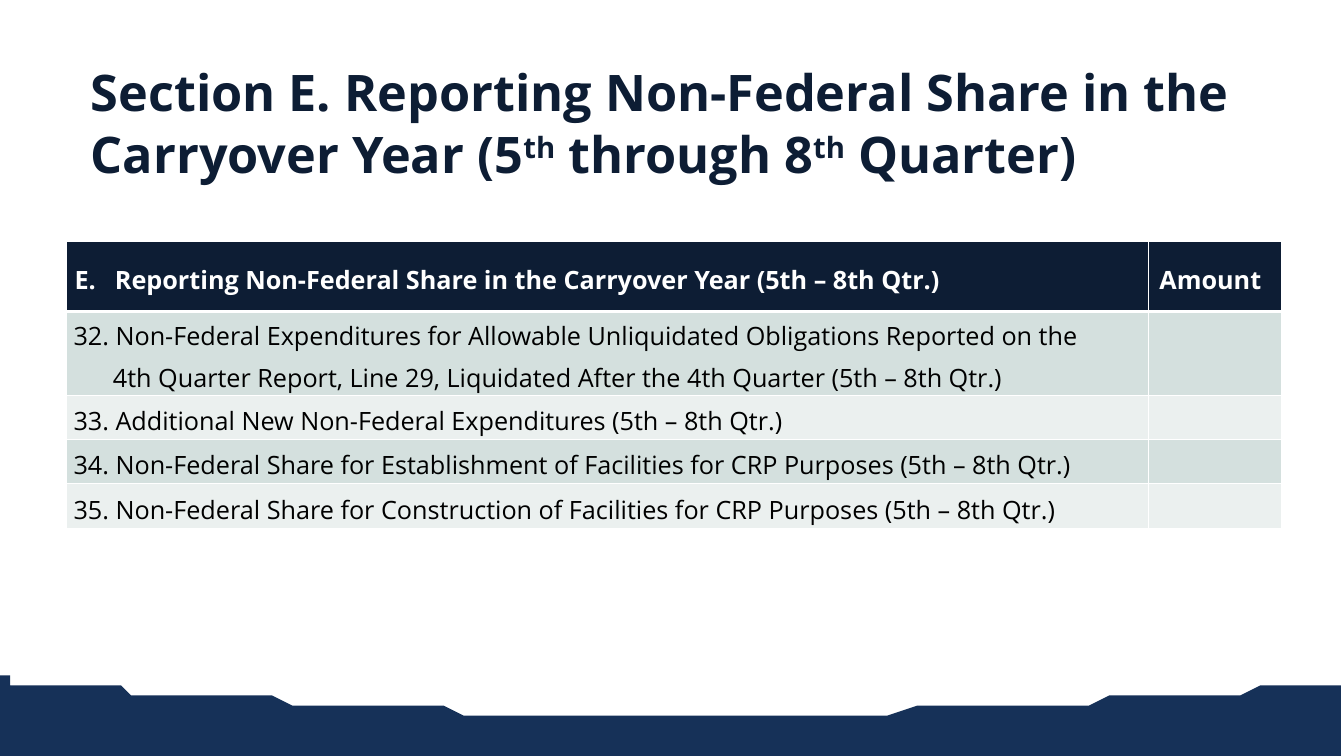
from lxml.etree import SubElement
from pptx import Presentation
from pptx.dml.color import RGBColor
from pptx.enum.dml import MSO_FILL
from pptx.enum.text import MSO_ANCHOR, MSO_AUTO_SIZE, PP_ALIGN
from pptx.oxml import parse_xml
from pptx.oxml.ns import nsdecls
from pptx.util import Inches, Pt

NAVY = RGBColor(0x0D, 0x1D, 0x34)
WAVE_BLUE = RGBColor(0x16, 0x31, 0x58)
SAGE = RGBColor(0xD4, 0xE0, 0xDE)
PALE_SAGE = RGBColor(0xEB, 0xF0, 0xEF)
WHITE = RGBColor(0xFF, 0xFF, 0xFF)
BLACK = RGBColor(0, 0, 0)

COLUMNS, ROWS = 133.33, 75
HEADER = [[("E.\tReporting Non-Federal Share in the Carryover Year (5th – 8th Qtr.)", 4, -4)],
          [("Amount", 0, 0)]]
LINES = [
    [("32. Non-Federal Expenditures for Allowable Unliquidated Obligations Reported on the", 0, 0),
     ("4th Quarter Report, Line 29, Liquidated After the 4th Quarter (5th – 8th Qtr.)", 3.9, 0)],
    [("33. Additional New Non-Federal Expenditures (5th – 8th Qtr.)", 0, 0)],
    [("34. Non-Federal Share for Establishment of Facilities for CRP Purposes (5th – 8th Qtr.)", 0, 0)],
    [("35. Non-Federal Share for Construction of Facilities for CRP Purposes (5th – 8th Qtr.)", 0, 0)],
]


def apply(target, values):
    for name, value in values.items():
        setattr(target, name, value)


def bezier(start, first, second, end, steps=40):
    for step in range(steps + 1):
        t = step / steps
        weights = ((1 - t) ** 3, 3 * t * (1 - t) ** 2, 3 * t ** 2 * (1 - t), t ** 3)
        yield tuple(sum(w * point[axis] for w, point in zip(weights, (start, first, second, end)))
                    for axis in (0, 1))


class SlideBuilder:
    font_name = "Open Sans"

    def __init__(self, deck):
        self.unit = deck.slide_height / ROWS
        self.page = deck.slides.add_slide(deck.slide_layouts[5])

    def grid(self, *cells):
        return [round(cell * self.unit) for cell in cells]

    def style(self, font, size, color, bold):
        apply(font, {"name": self.font_name, "size": Pt(size), "bold": bold})
        font.color.rgb = color

    def title(self, place, spans):
        box = self.page.shapes.title
        apply(box, dict(zip(("left", "top", "width", "height"), self.grid(*place))))
        apply(box.text_frame, {"vertical_anchor": MSO_ANCHOR.BOTTOM, "word_wrap": True,
                               "auto_size": MSO_AUTO_SIZE.NONE})
        para = box.text_frame.paragraphs[0]
        apply(para, {"alignment": PP_ALIGN.LEFT, "line_spacing": 1.02})
        for text, raised in spans:
            span = para.add_run()
            span.text = text
            self.style(span.font, 36, NAVY, True)
            if raised:
                span._r.get_or_add_rPr().set("baseline", "30000")

    def wave(self, curves, color):
        points = [point for curve in curves for point in bezier(*curve)]
        points += [(COLUMNS, ROWS), (0, ROWS)]
        builder = self.page.shapes.build_freeform(*points[0], scale=self.unit)
        builder.add_line_segments(points[1:], close=True)
        shape = builder.convert_to_shape()
        shape.shadow.inherit = False
        shape.fill.solid()
        shape.fill.fore_color.rgb = color
        shape.line.fill.background()

    def borders(self, cell, bottom):
        properties = cell._tc.get_or_add_tcPr()
        for index, (side, width) in enumerate((("L", 1), ("R", 1), ("T", 1), ("B", bottom))):
            line = parse_xml(f'<a:ln{side} {nsdecls("a")} w="{Pt(width)}"><a:solidFill>'
                             f'<a:srgbClr val="{WHITE}"/></a:solidFill></a:ln{side}>')
            properties.insert(index, line)

    def cell(self, cell, paragraphs, fill, color, bold, margin, bottom):
        side = self.grid(margin)[0]
        apply(cell, {"margin_left": side, "margin_right": side, "margin_top": 0,
                     "margin_bottom": 0, "vertical_anchor": MSO_ANCHOR.MIDDLE})
        cell.fill.solid()
        cell.fill.fore_color.rgb = fill
        self.borders(cell, bottom)
        frame = cell.text_frame
        for index, (text, left, first) in enumerate(paragraphs):
            para = frame.add_paragraph() if index else frame.paragraphs[0]
            para.line_spacing = 1.2
            left, first = self.grid(left, first)
            properties = para._p.get_or_add_pPr()
            properties.set("marL", str(left))
            properties.set("indent", str(first))
            span = para.add_run()
            span.text = text
            self.style(span.font, 18, color, bold)

    def table(self, place, widths, heights, header, lines):
        table = self.page.shapes.add_table(len(heights), len(widths), *self.grid(*place)).table
        for column, width in zip(table.columns, self.grid(*widths)):
            column.width = width
        for row, height in zip(table.rows, self.grid(*heights)):
            row.height = height
        for index, (paragraphs, margin) in enumerate(zip(header, (0.8, 1.1))):
            self.cell(table.cell(0, index), paragraphs, NAVY, WHITE, True, margin, 3)
        for index, paragraphs in enumerate(lines, start=1):
            fill = SAGE if index % 2 else PALE_SAGE
            for column, content in enumerate((paragraphs, [("", 0, 0)])):
                self.cell(table.cell(index, column), content, fill, BLACK, False, 0.7, 1)


def main():
    deck = Presentation()
    apply(deck, {"slide_width": Inches(13.33), "slide_height": Inches(7.5)})
    slide = SlideBuilder(deck)
    slide.wave([((0, 67.3), (0, 67.8), (44, 71), (66.2, 71.1)),
                ((66.2, 71.1), (88.5, 71.2), (COLUMNS, 68), (COLUMNS, 67.5))], WAVE_BLUE)
    slide.title((8, 4, 117.6, 14.7), [
        ("Section E. Reporting Non-Federal Share in the Carryover Year (5", False),
        ("th", True), (" through 8", False), ("th", True), (" Quarter)", False)])
    slide.table((6.6, 23.9, 120.5, 28.5), (107.3, 13.2), (7, 8.3, 4.4, 4.4, 4.4), HEADER, LINES)
    deck.save("out.pptx")


if __name__ == "__main__":
    main()
